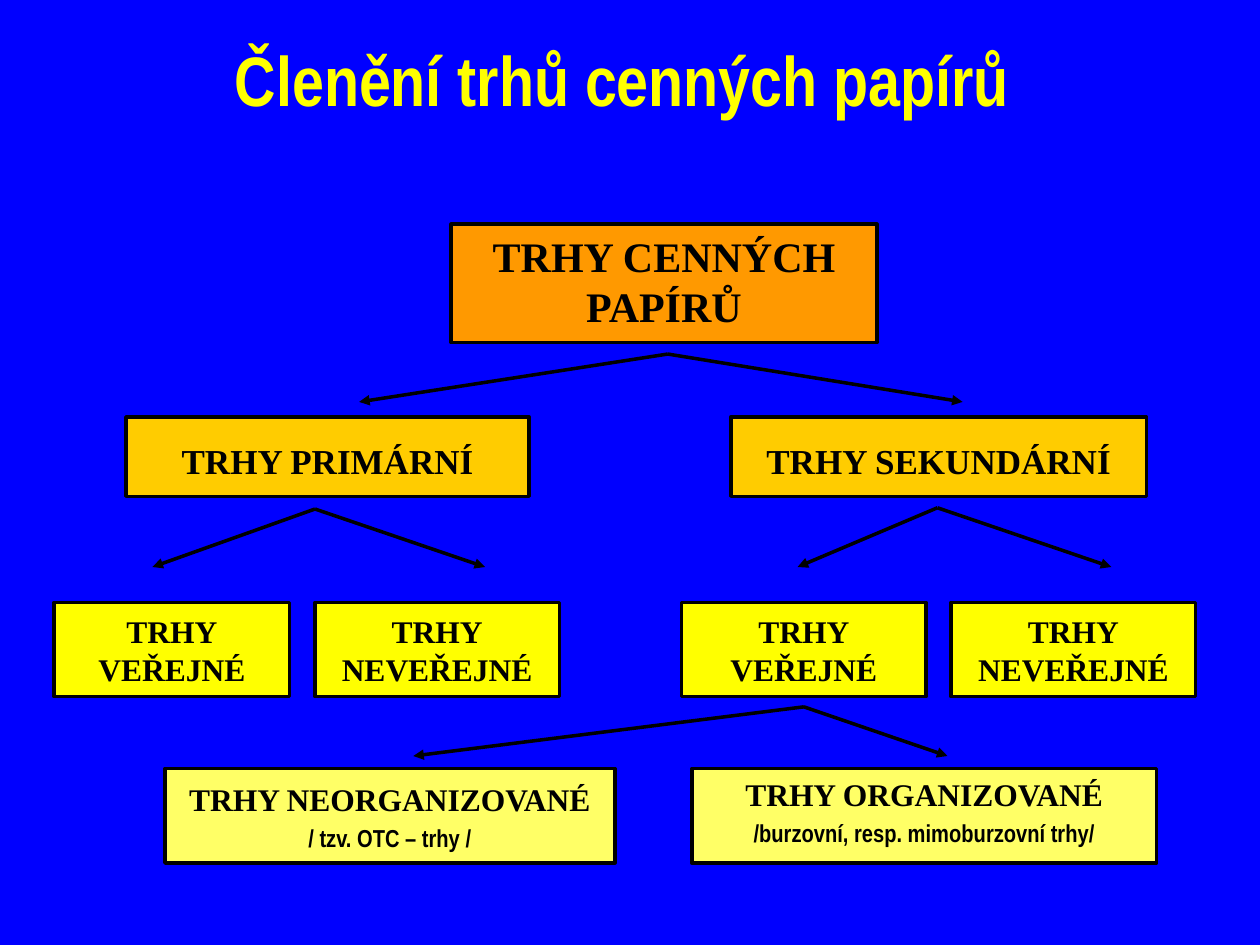
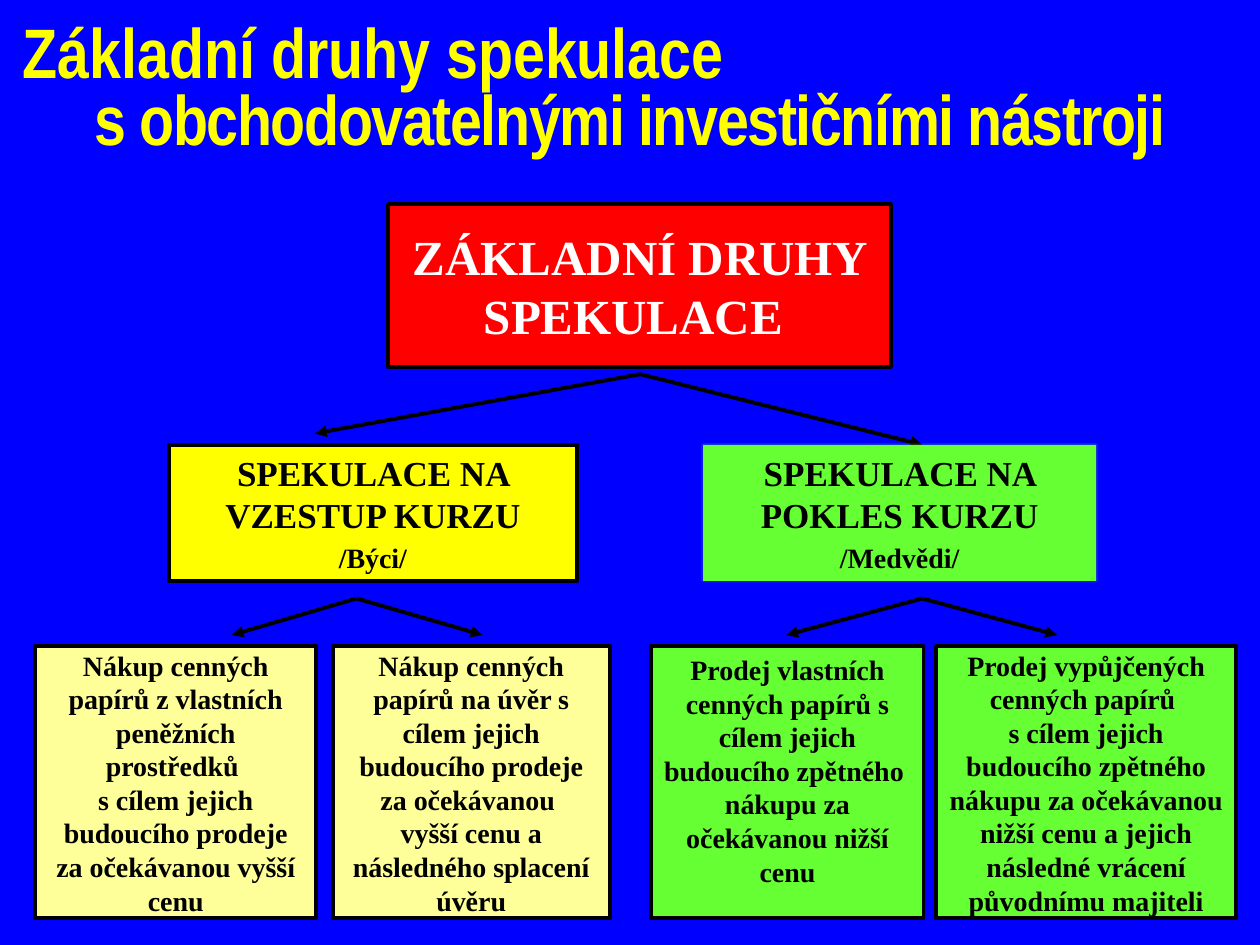
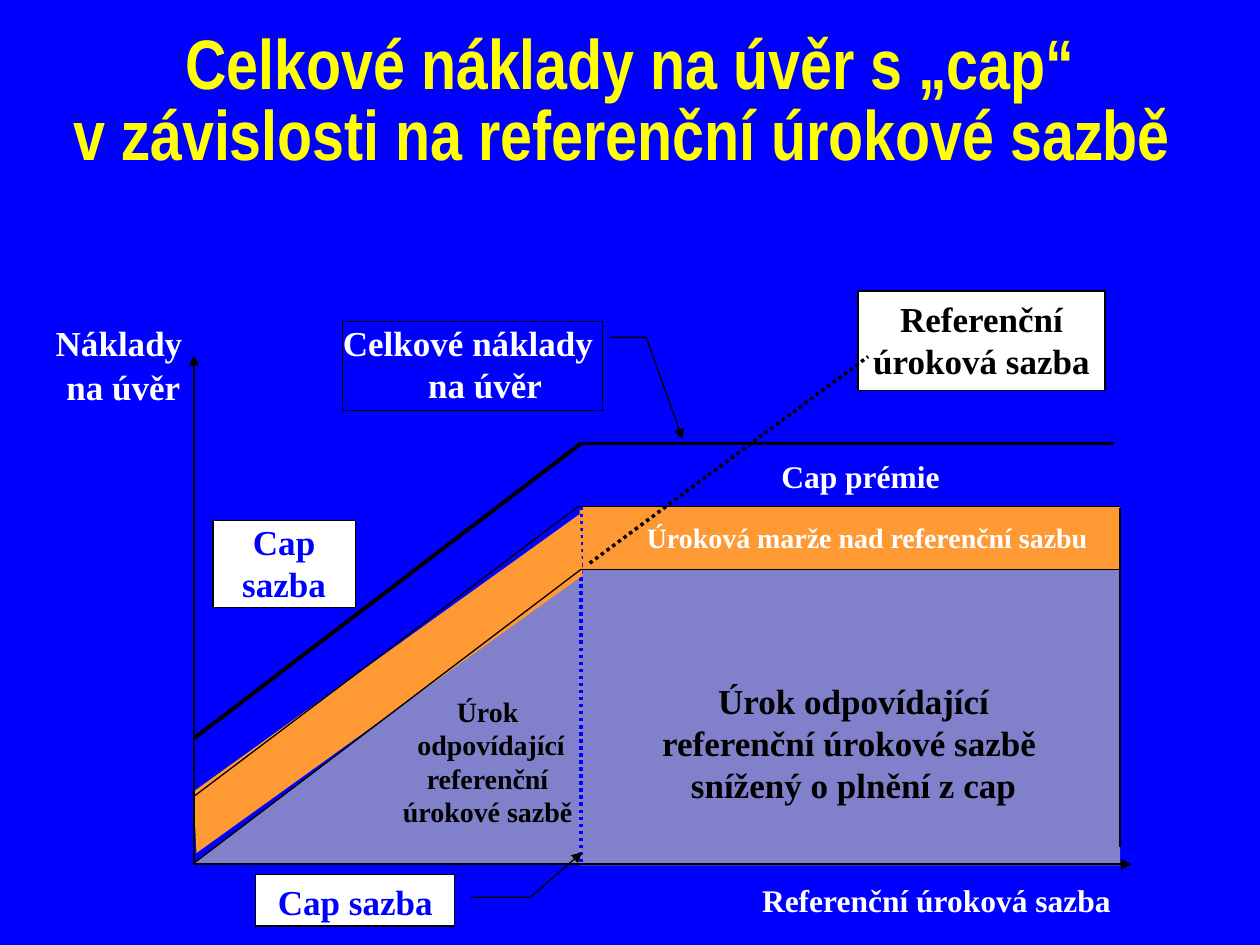
from dataclasses import dataclass

from lxml.etree import SubElement
from pptx import Presentation
from pptx.dml.color import RGBColor
from pptx.enum.dml import MSO_LINE as Dash
from pptx.enum.shapes import MSO_CONNECTOR as Connector, MSO_SHAPE as Preset
from pptx.enum.text import MSO_ANCHOR as Anchor, PP_ALIGN as Align
from pptx.oxml.ns import qn
from pptx.util import Inches, Pt

# Grid: 100 columns by 75 rows of square cells
COLUMNS, ROWS = 100, 75
CELL = Inches(0.1)

BLUE = RGBColor(0x00, 0x00, 0xFF)
YELLOW = RGBColor(0xFF, 0xFF, 0x00)
BLACK = RGBColor(0x00, 0x00, 0x00)
WHITE = RGBColor(0xFF, 0xFF, 0xFF)
RED = RGBColor(0xFF, 0x00, 0x00)
ORANGE = RGBColor(0xFF, 0x99, 0x00)
GOLD = RGBColor(0xFF, 0xCC, 0x00)
LEMON = RGBColor(0xFF, 0xFF, 0x66)
CREAM = RGBColor(0xFF, 0xFF, 0x99)
GREEN = RGBColor(0x66, 0xFF, 0x33)
APRICOT = RGBColor(0xFF, 0x99, 0x33)

SERIF = "Times New Roman"
NARROW = "Arial Narrow"
INSETS = (1, 0.5)
NO_INSETS = (0, 0)


@dataclass
class Box:
    left: float
    top: float
    width: float
    height: float

    def inner(self, left, top, width, height):
        return Box(self.left + left, self.top + top, width, height)

    def point(self, column, row):
        return cells(self.left + column), cells(self.top + row)

    def frame(self):
        return [cells(n) for n in (self.left, self.top, self.width, self.height)]


def cells(count):
    return round(count * CELL)


# Text
def add_paragraph(paragraph, text, size=18, color=BLACK, font=SERIF, align=Align.CENTER,
                  before=0, after=0, spacing=None, tracking=None, indent=0):
    paragraph.alignment = align
    paragraph.space_before, paragraph.space_after = Pt(before), Pt(after)
    if spacing:
        paragraph.line_spacing = spacing
    if indent:
        properties = paragraph._p.get_or_add_pPr()
        properties.set("marL", str(cells(indent)))
        properties.set("indent", "0")
    run = paragraph.add_run()
    run.text = text
    run.font.name, run.font.size, run.font.bold = font, Pt(size), True
    run.font.color.rgb = color
    if tracking:
        run.font._element.set("spc", str(round(tracking * 100)))


def write_text(shape, lines, anchor=Anchor.TOP, insets=INSETS, **style):
    """Each line is a string, or a string with its own format."""
    frame = shape.text_frame
    frame.word_wrap = True
    frame.vertical_anchor = anchor
    frame.margin_left = frame.margin_right = cells(insets[0])
    frame.margin_top = frame.margin_bottom = cells(insets[1])
    for number, line in enumerate(lines):
        text, own = (line, {}) if isinstance(line, str) else line
        paragraph = frame.add_paragraph() if number else frame.paragraphs[0]
        add_paragraph(paragraph, text, **{**style, **own})


def add_label(slide, box, lines, **style):
    write_text(slide.shapes.add_textbox(*box.frame()), lines, **style)


# Shapes and lines
def set_alpha(fill_parent, percent):
    color = fill_parent.find(qn("a:solidFill"))[0]
    SubElement(color, qn("a:alpha")).set("val", str(percent * 1000))


def add_arrowhead(properties):
    SubElement(properties.find(qn("a:ln")), qn("a:tailEnd")).set("type", "triangle")


def add_shape(slide, box, fill=None, line=None, width=0.75, preset=Preset.RECTANGLE,
              alpha=None, rotation=0, adjustments=()):
    shape = slide.shapes.add_shape(preset, *box.frame())
    shape.shadow.inherit = False
    shape.rotation = rotation
    for index, value in enumerate(adjustments):
        shape.adjustments[index] = value
    if fill is None:
        shape.fill.background()
    else:
        shape.fill.solid()
        shape.fill.fore_color.rgb = fill
    if alpha:
        set_alpha(shape.element.spPr, alpha)
    if line is None:
        shape.line.fill.background()
    else:
        shape.line.color.rgb = line
        shape.line.width = Pt(width)
    return shape


def add_line(slide, box, start, end, width=0.75, color=BLACK, dash=None, arrow=False):
    connector = slide.shapes.add_connector(
        Connector.STRAIGHT, *box.point(*start), *box.point(*end))
    connector.line.color.rgb = color
    connector.line.width = Pt(width)
    if dash:
        connector.line.dash_style = dash
    properties = connector._element.spPr
    if arrow:
        add_arrowhead(properties)
    SubElement(properties, qn("a:effectLst"))


def add_forks(slide, box, forks, width):
    for start, *ends in forks:
        for end in ends:
            add_line(slide, box, start, end, width, arrow=True)


# Parts shared by all slides
def add_slide(presentation, title_box, title_lines, insets=INSETS, spacing=None):
    slide = presentation.slides.add_slide(presentation.slide_layouts[6])
    slide.background.fill.solid()
    slide.background.fill.fore_color.rgb = BLUE
    add_label(slide, title_box, title_lines, anchor=Anchor.MIDDLE, insets=insets,
              size=40, color=YELLOW, font=NARROW, spacing=spacing)
    return slide


# Slide 1: tree of the markets
def draw_market_tree(slide, box):
    def node(left, top, width, height, fill, lines, anchor=Anchor.MIDDLE, **style):
        shape = add_shape(slide, box.inner(left, top, width, height), fill, BLACK, 2)
        write_text(shape, lines, anchor=anchor, **style)

    node(31.5, 0, 33.8, 9.4, ORANGE, ["TRHY CENNÝCH PAPÍRŮ"], Anchor.TOP, size=24)
    for left, width, text, before in ((5.7, 32, "TRHY PRIMÁRNÍ", 23),
                                      (53.7, 33, "TRHY SEKUNDÁRNÍ", 6)):
        node(left, 15.3, width, 6.3, GOLD, [text], size=20, spacing=1.2, before=before)
    for left, width, text in ((0, 18.7, "VEŘEJNÉ"), (20.7, 19.4, "NEVEŘEJNÉ"),
                              (49.8, 19.4, "VEŘEJNÉ"), (71.2, 19.4, "NEVEŘEJNÉ")):
        node(left, 30, width, 7.5, YELLOW, ["TRHY", text])
    for left, width, anchor, text, detail in (
            (8.8, 35.7, Anchor.MIDDLE, "TRHY NEORGANIZOVANÉ", "/ tzv. OTC – trhy /"),
            (50.6, 36.9, Anchor.TOP, "TRHY ORGANIZOVANÉ",
             "/burzovní, resp. mimoburzovní trhy/")):
        node(left, 43.2, width, 7.5, LEMON,
             [(text, dict(before=6)), (detail, dict(size=14, font=NARROW))], anchor, after=3)

    add_forks(slide, box, [
        ((48.7, 10.3), (24.2, 14.1), (72.1, 14.1)),
        ((20.7, 22.6), (7.8, 27.2), (34.2, 27.2)),
        ((70.1, 22.5), (59, 27.2), (83.9, 27.2)),
        ((59.5, 38.3), (28.5, 42.2), (70.9, 42.2)),
    ], width=2)


# Slide 2: tree of the kinds of speculation
def draw_speculation_tree(slide, box):
    add_forks(slide, box, [
        ((48, 13.5), (22.2, 18.2), (70.4, 19.1)),
        ((25.5, 31.3), (15.6, 34.2), (35.5, 34.2)),
        ((70.4, 31.3), (59.6, 34.2), (81.1, 34.2)),
    ], width=2.25)

    root = add_shape(slide, box.inner(28, 0, 39.9, 12.9), RED, BLACK, 2.25)
    write_text(root, ["ZÁKLADNÍ DRUHY SPEKULACE "], anchor=Anchor.MIDDLE,
               size=28, color=WHITE, before=3)

    # Rising and falling prices
    for left, width, fill, line, text, nickname in (
            (10.6, 32.4, YELLOW, BLACK, "SPEKULACE NA VZESTUP KURZU", "/Býci/"),
            (53, 31.2, GREEN, GREEN, "SPEKULACE NA POKLES KURZU", "/Medvědi/")):
        branch = add_shape(slide, box.inner(left, 19.1, width, 10.8), fill, line, 2.25)
        if line == GREEN:
            set_alpha(branch.element.spPr.find(qn("a:ln")), 11)
        write_text(branch, [(text, dict(size=20, before=6)),
                            (nickname, dict(size=16, before=3))], anchor=Anchor.MIDDLE)

    # Ways to speculate
    for left, width, fill, anchor, *lines in (
            (0, 22.3, CREAM, Anchor.MIDDLE,
             "Nákup cenných papírů z vlastních peněžních prostředků ",
             "s cílem jejich budoucího prodeje za očekávanou vyšší cenu"),
            (23.6, 22, CREAM, Anchor.MIDDLE,
             "Nákup cenných papírů na úvěr s cílem jejich budoucího prodeje za očekávanou ",
             "vyšší cenu a následného splacení úvěru"),
            (48.9, 21.6, GREEN, Anchor.TOP,
             "Prodej vlastních cenných papírů s cílem jejich budoucího zpětného ",
             "nákupu za očekávanou nižší cenu"),
            (71.5, 23.8, GREEN, Anchor.MIDDLE,
             "Prodej vypůjčených cenných papírů ",
             "s cílem jejich budoucího zpětného nákupu za očekávanou nižší cenu "
             "a jejich následné vrácení původnímu majiteli")):
        leaf = add_shape(slide, box.inner(left, 35.1, width, 21.6), fill, BLACK, 2.25)
        write_text(leaf, lines, anchor=anchor, size=16)


# Slide 3: cost diagram, measured from the top of the vertical axis
def draw_cost_areas(slide, box):
    add_shape(slide, box.inner(30.6, 16.9, 42.9, 23.6), CREAM, alpha=50)
    add_shape(slide, box.inner(3.7, 13.4, 23.2, 30.7), CREAM, alpha=50,
              preset=Preset.RIGHT_TRIANGLE, rotation=270)
    add_shape(slide, box.inner(30.6, 12, 42.9, 5), APRICOT)
    # Guides at the cap rate
    for start, end in (((30.8, 16.9), (0.9, 17)), ((30.7, 40.8), (30.7, 6.9))):
        add_line(slide, box, start, end, 2, BLUE, Dash.ROUND_DOT)
    add_shape(slide, box.inner(-4.8, 24, 40.4, 4.1), APRICOT,
              preset=Preset.PARALLELOGRAM, rotation=324.3, adjustments=[0.65])


def draw_cost_labels(slide, box):
    # Framed labels
    cap = add_shape(slide, box.inner(1.5, 13.1, 11.3, 6.9), WHITE, BLACK)
    write_text(cap, ["Cap sazba"], insets=NO_INSETS, size=20, color=BLUE)
    reference = add_shape(slide, box.inner(52.7, -5.1, 19.6, 7.9), WHITE, BLACK)
    write_text(reference, ["Referenční úroková sazba"], size=20)

    # Callouts
    for place, fill, color, insets, bends, lines in (
            ((4.9, 41.2, 15.8, 4.1), WHITE, BLUE, INSETS,
             (0.44, 1.08, 0.44, 1.38, -0.43, 1.64), ["Cap sazba"]),
            ((11.8, -2.7, 20.6, 7.1), None, WHITE, NO_INSETS,
             (0.18, 1.03, 0.18, 1.17, 1.32, 1.31),
             ["Celkové náklady ", ("na úvěr", dict(indent=2))])):
        callout = add_shape(slide, box.inner(*place), fill, BLACK,
                            preset=Preset.LINE_CALLOUT_2, adjustments=bends)
        add_arrowhead(callout.element.spPr)
        write_text(callout, lines, insets=insets, size=20, color=color)

    # Plain labels
    for place, lines, style in (
            ((35.5, 25.2, 33.7, 14.5),
             [("Úrok odpovídající referenční úrokové sazbě ", dict(before=5)),
              "snížený o plnění z cap"], dict(size=20)),
            ((44.1, 41.7, 30.7, 3.2), ["Referenční úroková sazba"],
             dict(color=WHITE, align=Align.LEFT, insets=(1, 0), before=5, after=5)),
            ((45.7, 8.1, 14.4, 3), ["Cap prémie"], dict(color=WHITE, insets=NO_INSETS)),
            ((35.5, 13.1, 36.4, 3.6), ["Úroková marže nad referenční sazbu "],
             dict(size=16, color=WHITE, insets=NO_INSETS)),
            ((-11.1, -2.7, 11, 6.5), ["Náklady ", "na úvěr"],
             dict(size=20, color=WHITE, insets=NO_INSETS, before=1)),
            ((14.7, 26.9, 17.2, 11.3), ["Úrok", " odpovídající referenční úrokové sazbě"],
             dict(size=16, insets=NO_INSETS))):
        add_label(slide, box.inner(*place), lines, **style)


def draw_cost_curves(slide, box):
    # Each cost rises up to the cap and stays level after it
    for start, bend, end, width in (((0, 30.4), (30.7, 7), (73, 7), 2.25),
                                    ((0, 35), (30.5, 12), (73.5, 12), 0.75),
                                    ((0, 40.3), (30.7, 17), (73.5, 17), 0.75)):
        add_line(slide, box, start, bend, width)
        add_line(slide, box, bend, end, width)
    add_line(slide, box, (73.5, 39), (73.5, 12.1))
    add_line(slide, box, (31.4, 16.5), (53.5, 0.1), 2, dash=Dash.ROUND_DOT)
    # Axes
    for end in ((box.width, box.height), (0, 0)):
        add_line(slide, box, (0, box.height), end, 1, arrow=True)


def main():
    presentation = Presentation()
    presentation.slide_width = cells(COLUMNS)
    presentation.slide_height = cells(ROWS)

    slide = add_slide(presentation, Box(7.5, 0, 85, 12.5), ["Členění trhů cenných papírů "])
    draw_market_tree(slide, Box(4.3, 17.8, 90.6, 50.7))

    slide = add_slide(
        presentation, Box(0, 1.4, 100, 11.8),
        [("Základní druhy spekulace", dict(align=Align.LEFT)),
         ("s obchodovatelnými investičními nástroji", dict(tracking=-0.8))],
        insets=(1.8, 0.5), spacing=0.8)
    draw_speculation_tree(slide, Box(2.8, 16.2, 95.3, 56.7))

    slide = add_slide(
        presentation, Box(1.2, 1.1, 97.6, 14.2),
        ["Celkové náklady na úvěr s „cap“", "v závislosti na referenční úrokové sazbě "],
        spacing=0.85)
    diagram = Box(15.4, 28.2, 74.4, 40.4)
    draw_cost_areas(slide, diagram)
    draw_cost_labels(slide, diagram)
    draw_cost_curves(slide, diagram)

    presentation.save("out.pptx")


if __name__ == "__main__":
    main()
